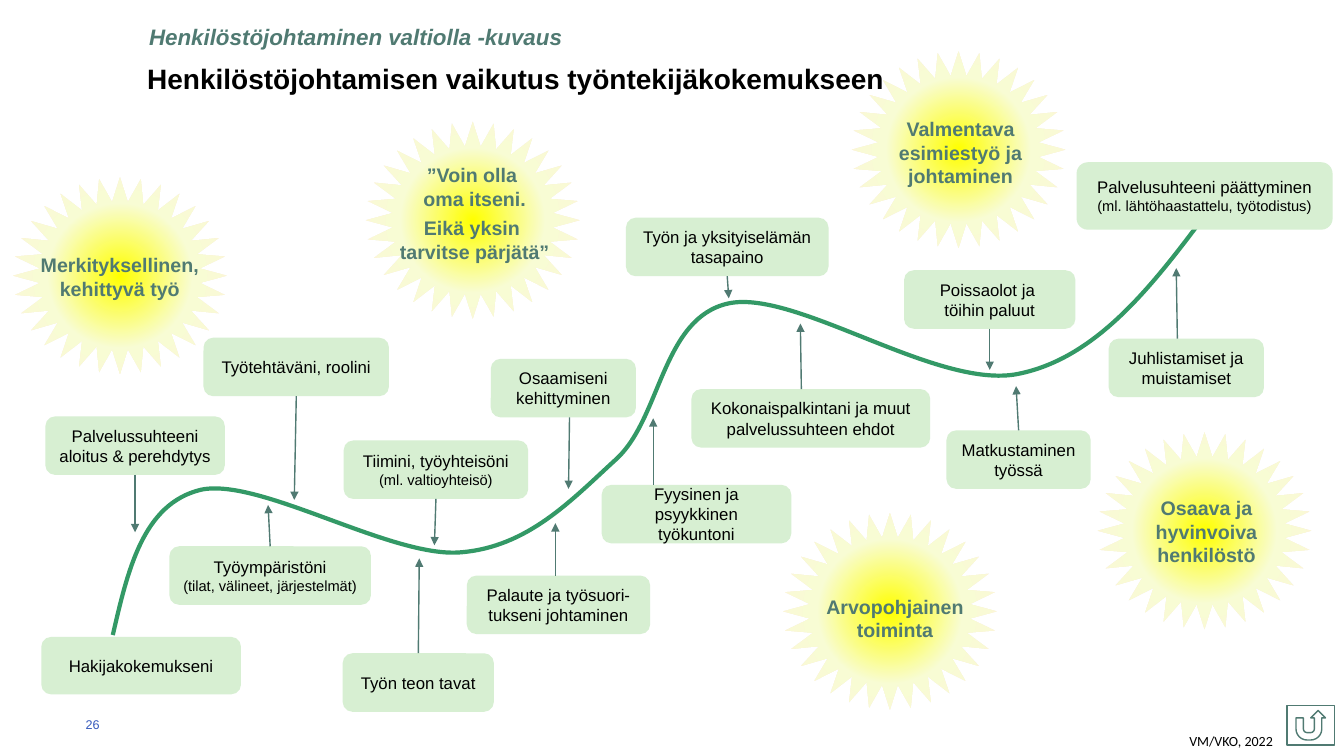
from lxml.etree import SubElement
from pptx import Presentation
from pptx.dml.color import RGBColor
from pptx.enum.shapes import MSO_CONNECTOR as Link, MSO_SHAPE as Kind
from pptx.enum.text import MSO_ANCHOR as Anchor, MSO_AUTO_SIZE as Auto, PP_ALIGN as Align
from pptx.oxml import parse_xml
from pptx.oxml.ns import nsdecls, qn
from pptx.util import Pt

TEAL = RGBColor(0x50, 0x7A, 0x72)
GREEN = RGBColor(0x33, 0x99, 0x66)
MINT = RGBColor(0xD7, 0xEF, 0xD2)
BLACK = RGBColor(0, 0, 0)
BLUE = RGBColor(0x36, 0x5A, 0xBD)
GLOW = [(0, "FFFF00"), (50, "F8FCD4"), (100, "FDF2D9")]

# Content (all lengths in points)
TITLE = "Henkilöstöjohtamisen vaikutus työntekijäkokemukseen"
TOPIC = "Henkilöstöjohtaminen valtiolla -kuvaus"
ROW = 41.8  # usual box height

# left, top, width, height, text, small text, arrow (start x, tip x, tip y)
BOXES = [
    (29.5, 455, 142.6, 41, "Hakijakokemukseni", "", None),
    (32.4, 297.4, 128.2, ROW, "Palvelussuhteeni aloitus & perehdytys", "", (96.5, 96.5, 380.2)),
    (121, 390.2, 144, ROW, "Työympäristöni\n", "(tilat, välineet, järjestelmät)",
     (191.5, 191.5, 360.7)),
    (145.4, 241.2, 132.5, ROW, "Työtehtäväni, roolini", "", (211, 210.2, 357.1)),
    (245.5, 314.6, 131.8, ROW, "Tiimini, työyhteisöni ", "(ml. valtioyhteisö)",
     (310.3, 310.3, 389.5)),
    (244.8, 466.6, 108, ROW, "Työn teon tavat", "", (298.8, 299.5, 398.9)),
    (333.4, 411.1, 131, ROW, "Palaute ja työsuori-tukseni johtaminen", "",
     (396.7, 396.7, 373.7)),
    (350.6, 256.3, 103.7, ROW, "Osaamiseni kehittyminen", "", (406.8, 406.1, 349.2)),
    (429.8, 346.3, 135.4, ROW, "Fyysinen ja psyykkinen työkuntoni", "", (466.6, 466.6, 298.8)),
    (447.1, 155.5, 144.7, ROW, "Työn ja yksityiselämän tasapaino", "", (519.8, 520.6, 213.1)),
    (493.9, 277.9, 170.6, ROW, "Kokonaispalkintani ja muut palvelussuhteen ehdot", "",
     (572.4, 571.7, 231.1)),
    (645.8, 193, 122.4, ROW, "Poissaolot ja \ntöihin paluut", "", (707, 707, 264.2)),
    (676.1, 307.4, 103, ROW, "Matkustaminen työssä", "", (725.8, 725.8, 275.8)),
    (792, 241.9, 110.9, ROW, "Juhlistamiset ja muistamiset", "", (841, 840.2, 191.5)),
    (769, 115.9, 182.9, 48.2, "Palvelusuhteeni päättyminen ",
     "(ml. lähtöhaastattelu, työtodistus)", None),
]

# star left and top, label frame, label paragraphs
STAR = (152.6, 140.4)
STARS = [
    ((9.4, 126.7), (23, 180.7, 125.3, 34), ["Merkityksellinen, kehittyvä työ"]),
    ((261.4, 87.1), (266.4, 116.6, 145.4, 74),
     ["”Voin olla \noma itseni.", "Eikä yksin \ntarvitse pärjätä”"]),
    ((608.4, 36.7), (612.7, 83.5, 146.9, 51), ["Valmentava esimiestyö ja johtaminen"]),
    ((784.1, 308.9), (799.2, 354.2, 125.3, 51), ["Osaava ja hyvinvoiva\nhenkilöstö"]),
    ((559.4, 366.5), (587.5, 424.8, 103.7, 34), ["Arvopohjainen toiminta"]),
]

# start point, then two handles and an end point per bend
CURVE = [
    (80.6, 453.6),
    (91.4, 406.8), (102.2, 360), (143.3, 349.9),
    (185, 340.6), (278.6, 398.2), (328.3, 394.6),
    (377.3, 391), (408.2, 357.1), (440.6, 327.6),
    (472.3, 298.1), (473, 226.8), (520.6, 216.7),
    (568.8, 206.6), (669.6, 278.6), (727.2, 267.1),
    (784.8, 255.6), (825.1, 201.6), (865.4, 147.6),
]

deck = Presentation()
deck.slide_width, deck.slide_height = Pt(960), Pt(540)
slide = deck.slides.add_slide(deck.slide_layouts[5])
shapes = slide.shapes


def write(para, text, size, color=BLACK, face="Arial", bold=False, slant=False):
    for i, line in enumerate(text.split("\n")):
        if i:
            para.add_line_break()
        if line:
            run = para.add_run()
            run.text = line
            font = run.font
            font.name, font.size, font.bold, font.italic = face, Pt(size), bold, slant
            font.color.rgb = color


def label(frame, inset=True, wrap=True):
    text = shapes.add_textbox(*map(Pt, frame)).text_frame
    text.word_wrap = wrap
    if not inset:
        text.margin_left = text.margin_right = text.margin_top = text.margin_bottom = 0
    return text


def preset(kind, frame):
    shape = shapes.add_shape(kind, *map(Pt, frame))
    shape.shadow.inherit = False
    shape.fill.background()
    shape.line.fill.background()
    return shape


def outline(shape, color, width):
    shape.line.color.rgb = color
    shape.line.width = Pt(width)


# Glowing stars
for spot, _, _ in STARS:
    star = preset(Kind.STAR_32_POINT, spot + STAR)
    stops = "".join(f'<a:gs pos="{pos * 1000}"><a:srgbClr val="{tone}"/></a:gs>'
                    for pos, tone in GLOW)
    glow = parse_xml(
        f'<a:gradFill {nsdecls("a")} rotWithShape="1"><a:gsLst>{stops}</a:gsLst>'
        '<a:path path="circle"><a:fillToRect l="50000" t="50000" r="50000" b="50000"/>'
        '</a:path></a:gradFill>')
    props = star._element.spPr
    props.replace(props.find(qn("a:noFill")), glow)

# Journey curve: each three straight steps become one Bézier bend
points = [(Pt(x), Pt(y)) for x, y in CURVE]
pen = shapes.build_freeform(*points[0])
pen.add_line_segments(points[1:], close=False)
curve = pen.convert_to_shape()
curve.shadow.inherit = False
curve.fill.background()
outline(curve, GREEN, 3)
steps = list(curve._element.iter(qn("a:lnTo")))
trail = steps[0].getparent()
for i in range(0, len(steps), 3):
    bend = SubElement(trail, qn("a:cubicBezTo"))
    for step in steps[i:i + 3]:
        bend.append(step[0])
        trail.remove(step)

# Stage boxes and their arrows to the curve
for left, top, width, height, main, small, arrow in BOXES:
    box = preset(Kind.ROUNDED_RECTANGLE, (left, top, width, height))
    box.fill.solid()
    box.fill.fore_color.rgb = MINT
    text = box.text_frame
    text.word_wrap, text.vertical_anchor = True, Anchor.MIDDLE
    para = text.paragraphs[0]
    para.alignment = Align.CENTER
    write(para, main, 12)
    write(para, small, 10.5)
    if arrow:
        start, tip, end = arrow
        down = end > top
        edge = top + height if down else top
        link = shapes.add_connector(Link.STRAIGHT, Pt(start), Pt(edge), Pt(tip), Pt(end))
        if abs(start - left - width / 2) < 2:
            link.begin_connect(box, 2 if down else 0)
        outline(link, TEAL, 1)
        SubElement(link.line._get_or_add_ln(), qn("a:tailEnd"), type="triangle")
        SubElement(link._element.spPr, qn("a:effectLst"))

# Star labels
for _, frame, paras in STARS:
    text = label(frame, inset=False)
    for i, words in enumerate(paras):
        para = text.add_paragraph() if i else text.paragraphs[0]
        para.alignment = Align.CENTER
        para.space_before = Pt(4 if i else 0)
        write(para, words, 14, TEAL, bold=True)

# Title and topic line
title = shapes.title
title.left, title.top, title.width, title.height = map(Pt, (97.9, 34.6, 553.7, 45.4))
text = title.text_frame
text.auto_size, text.vertical_anchor = Auto.NONE, Anchor.MIDDLE
para = text.paragraphs[0]
para.alignment, para.line_spacing = Align.LEFT, 0.95
write(para, TITLE, 20, bold=True)
shapes._spTree.append(title._element)  # in front of the stars
write(label((99.4, 13, 480.2, 26.6)).paragraphs[0], TOPIC, 16, TEAL, bold=True, slant=True)

# Footer
text = label((61.2, 508.3, 28.8, 18), inset=False)
text.vertical_anchor = Anchor.MIDDLE
write(text.paragraphs[0], "26", 9, BLUE)
text = label((842.4, 519.8, 78.5, 19.4), wrap=False)
write(text.paragraphs[0], "VM/VKO, 2022", 10, face="Calibri")
outline(preset(Kind.ACTION_BUTTON_RETURN, (919.4, 504, 33.8, 28.1)), TEAL, 1)

deck.save("out.pptx")
